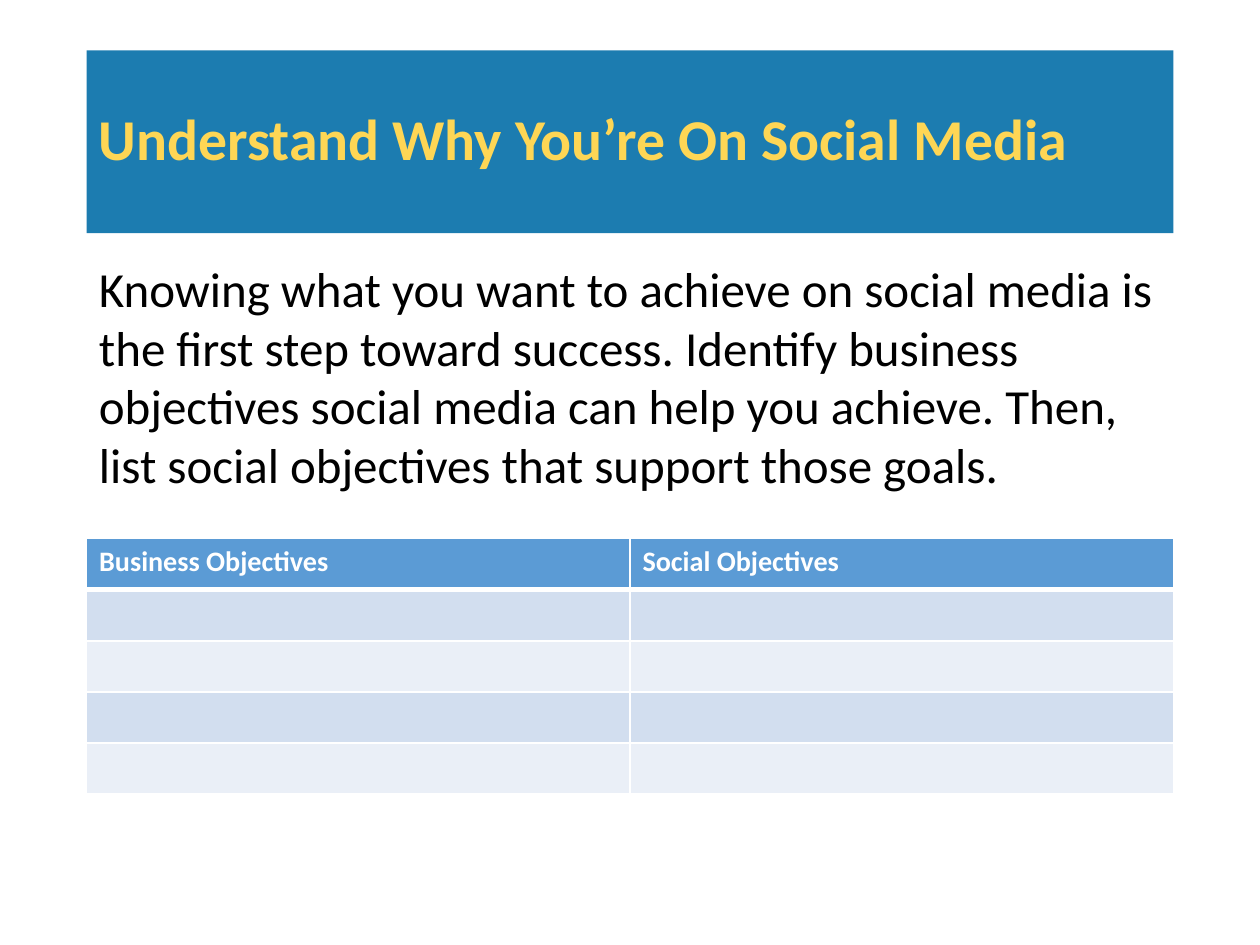
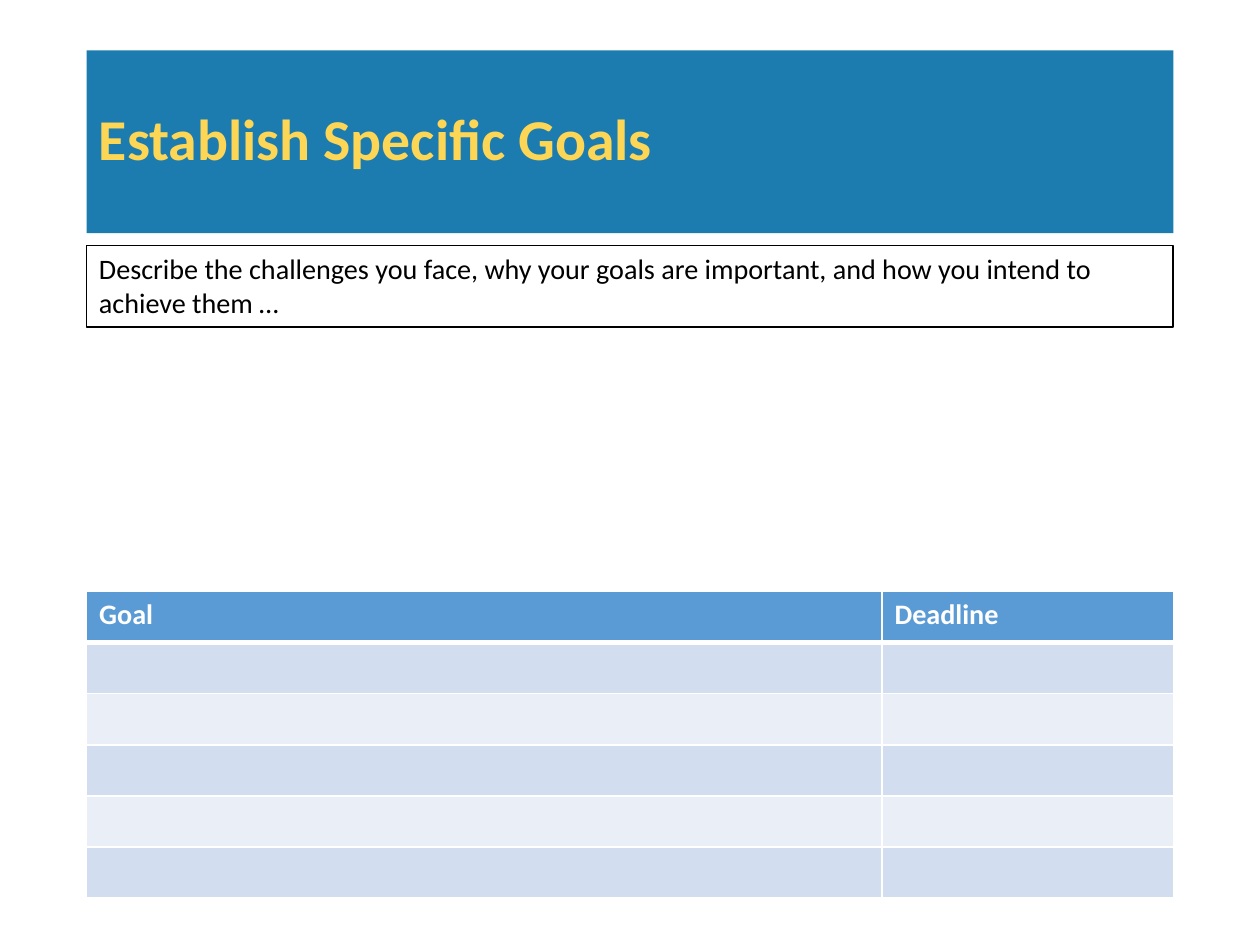
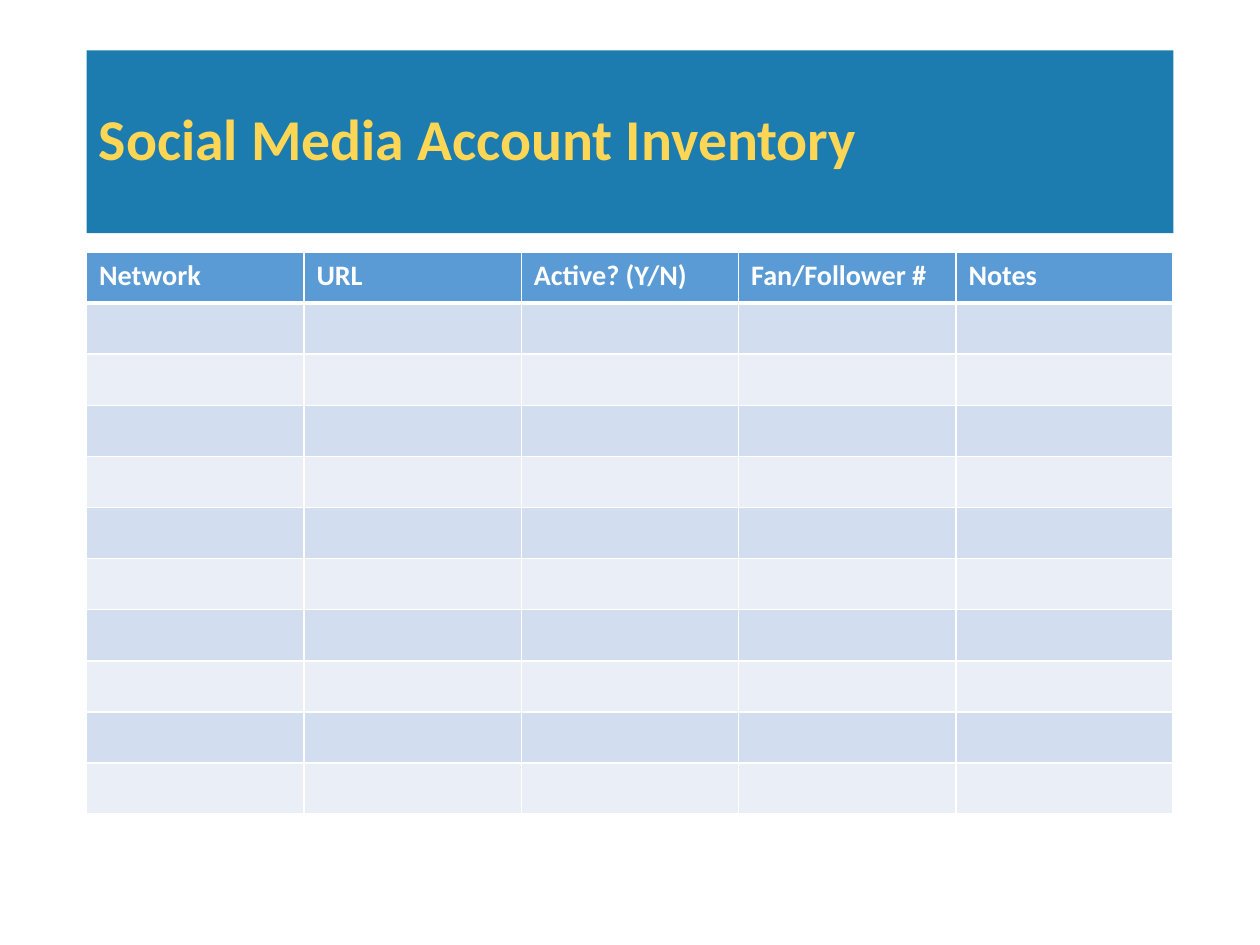
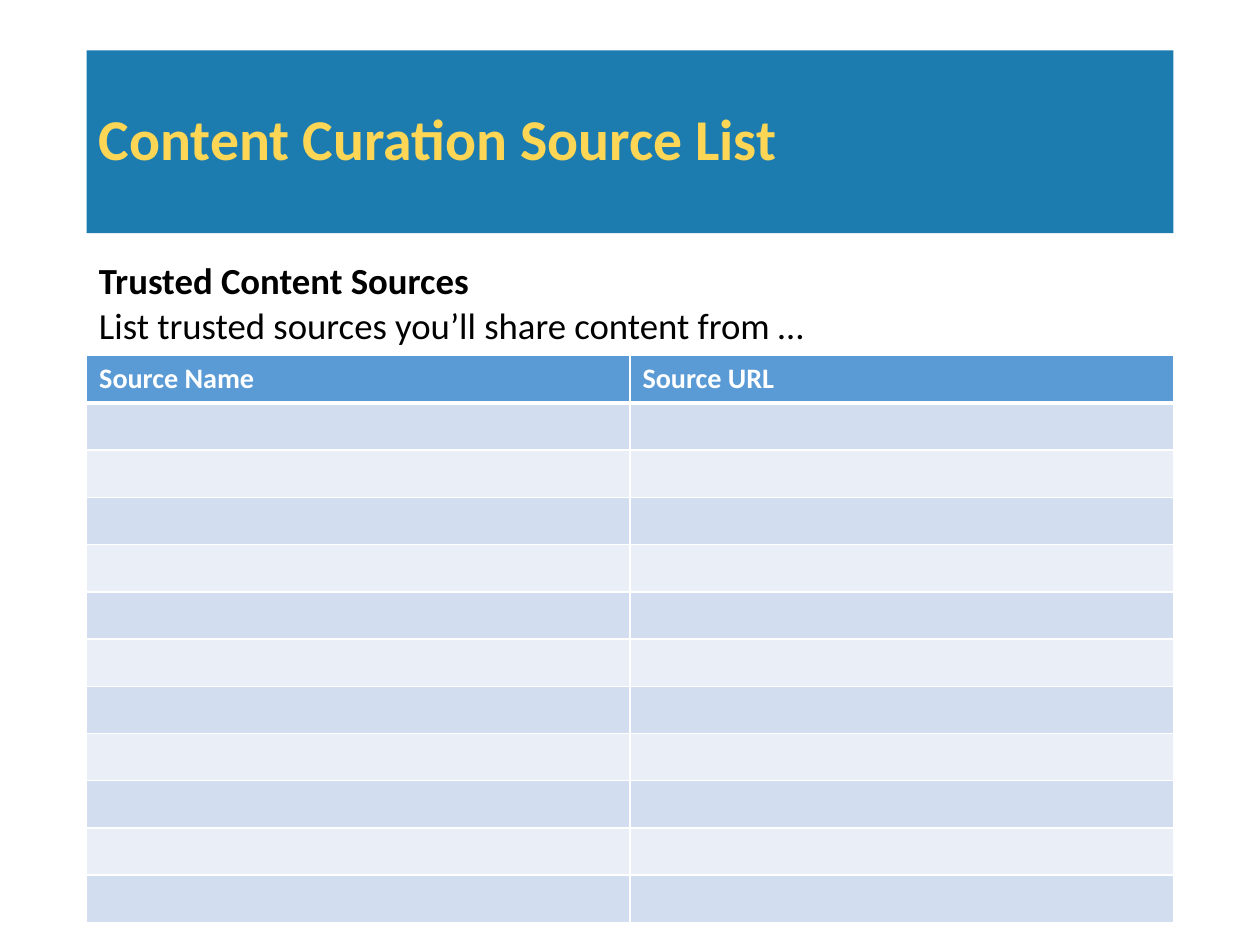
"""Build four social media planning worksheets, each with a title band and a fill-in table."""
import lxml.etree
import pptx
import pptx.dml.color
import pptx.enum.shapes
import pptx.enum.text
import pptx.oxml.ns
import pptx.util

Pt = pptx.util.Pt

FONT = "Calibri"
BAND, GOLD = "1C7CB0", "FED655"
HEADER, STRIPES = "5B9BD5", ("D2DEEF", "EAEFF7")
BLACK, WHITE = "000000", "FFFFFF"
LEFT, WIDTH = 49.5, 621
BAND_TOP, BAND_HEIGHT = 28.75, 104.5
TITLE_SIZE, TABLE_SIZE = 33, 16.1

WORKSHEETS = [
    {
        "title": "Understand Why You’re On Social Media",
        "intro": {
            "paragraphs": [("Knowing what you want to achieve on social media is the first step toward success. "
                            "Identify business objectives social media can help you achieve. "
                            "Then, list social objectives that support those goals.", False)],
            "size": 28, "top": 144, "height": 342.75, "boxed": False,
        },
        "grid": {"columns": [("Business Objectives", 310.5), ("Social Objectives", 310.5)],
                 "blank_rows": 4, "top": 307.75, "row_height": 29.2},
    },
    {
        "title": "Establish Specific Goals",
        "intro": {
            "paragraphs": [("Describe the challenges you face, why your goals are important, "
                            "and how you intend to achieve them …", False)],
            "size": TABLE_SIZE, "top": 140.25, "height": 46.5, "boxed": True,
        },
        "grid": {"columns": [("Goal", 454.5), ("Deadline", 166.5)],
                 "blank_rows": 5, "top": 338, "row_height": 29.2},
    },
    {
        "title": "Social Media Account Inventory",
        "grid": {"columns": [(heading, WIDTH / 5) for heading in
                             ("Network", "URL", "Active? (Y/N)", "Fan/Follower #", "Notes")],
                 "blank_rows": 10, "top": 144, "row_height": 29.2},
    },
    {
        "title": "Content Curation Source List",
        "intro": {
            "paragraphs": [("Trusted Content Sources", True),
                           ("List trusted sources you’ll share content from …", False)],
            "size": 21, "top": 144, "height": 342.75, "boxed": False,
        },
        "grid": {"columns": [("Source Name", 310.5), ("Source URL", 310.5)],
                 "blank_rows": 11, "top": 203.25, "row_height": 27},
    },
]


def rgb(hex_code):
    return pptx.dml.color.RGBColor.from_string(hex_code)


def write(paragraph, words, size, color, bold=False):
    run = paragraph.add_run()
    run.text = words
    run.font.name = FONT
    run.font.size = Pt(size)
    run.font.bold = bold
    run.font.color.rgb = rgb(color)


def add_box(slide, top, height, fill, outline=None):
    box = slide.shapes.add_shape(pptx.enum.shapes.MSO_SHAPE.RECTANGLE,
                                 Pt(LEFT), Pt(top), Pt(WIDTH), Pt(height))
    box.shadow.inherit = False
    box.fill.solid()
    box.fill.fore_color.rgb = rgb(fill)
    if outline:
        box.line.color.rgb = rgb(outline)
        box.line.width = Pt(1)
    else:
        box.line.fill.background()
    return box


def add_title(slide, title):
    frame = add_box(slide, BAND_TOP, BAND_HEIGHT, BAND).text_frame
    frame.word_wrap = True
    frame.vertical_anchor = pptx.enum.text.MSO_ANCHOR.MIDDLE
    heading = frame.paragraphs[0]
    heading.alignment = pptx.enum.text.PP_ALIGN.LEFT
    heading.line_spacing = 0.9
    write(heading, title, TITLE_SIZE, GOLD, True)


def add_intro(slide, paragraphs, size, top, height, boxed):
    if boxed:
        frame = add_box(slide, top, height, WHITE, BLACK).text_frame
    else:
        frame = slide.shapes.add_textbox(Pt(LEFT), Pt(top), Pt(WIDTH), Pt(height)).text_frame
    frame.word_wrap = True
    frame.vertical_anchor = pptx.enum.text.MSO_ANCHOR.TOP
    for index, (words, bold) in enumerate(paragraphs):
        paragraph = frame.add_paragraph() if index else frame.paragraphs[0]
        paragraph.alignment = pptx.enum.text.PP_ALIGN.LEFT
        write(paragraph, words, size, BLACK, bold)


def style_cell(cell, fill, top_width, bottom_width):
    properties = cell._tc.get_or_add_tcPr()
    for side, width in (("L", 1), ("R", 1), ("T", top_width), ("B", bottom_width)):
        border = lxml.etree.SubElement(properties, pptx.oxml.ns.qn(f"a:ln{side}"), w=str(Pt(width)))
        paint = lxml.etree.SubElement(border, pptx.oxml.ns.qn("a:solidFill"))
        lxml.etree.SubElement(paint, pptx.oxml.ns.qn("a:srgbClr"), val=WHITE)
    cell.fill.solid()
    cell.fill.fore_color.rgb = rgb(fill)


def add_grid(slide, columns, blank_rows, top, row_height):
    row_count = blank_rows + 1
    table = slide.shapes.add_table(row_count, len(columns), Pt(LEFT), Pt(top),
                                   Pt(WIDTH), Pt(row_height * row_count)).table
    for row in table.rows:
        row.height = Pt(row_height)
    for column_index, (heading, width) in enumerate(columns):
        table.columns[column_index].width = Pt(width)
        for row_index in range(row_count):
            cell = table.cell(row_index, column_index)
            paragraph = cell.text_frame.paragraphs[0]
            if row_index == 0:
                style_cell(cell, HEADER, 1, 3)
                write(paragraph, heading, TABLE_SIZE, WHITE, True)
            else:
                style_cell(cell, STRIPES[(row_index - 1) % 2], 3 if row_index == 1 else 1, 1)
                lxml.etree.SubElement(paragraph._p, pptx.oxml.ns.qn("a:endParaRPr"),
                                      sz=str(round(TABLE_SIZE * 100)))


def main():
    deck = pptx.Presentation()
    deck.slide_width, deck.slide_height = Pt(720), Pt(540)
    for worksheet in WORKSHEETS:
        slide = deck.slides.add_slide(deck.slide_layouts[6])
        add_title(slide, worksheet["title"])
        if "intro" in worksheet:
            add_intro(slide, **worksheet["intro"])
        add_grid(slide, **worksheet["grid"])
    deck.save("out.pptx")


if __name__ == "__main__":
    main()
